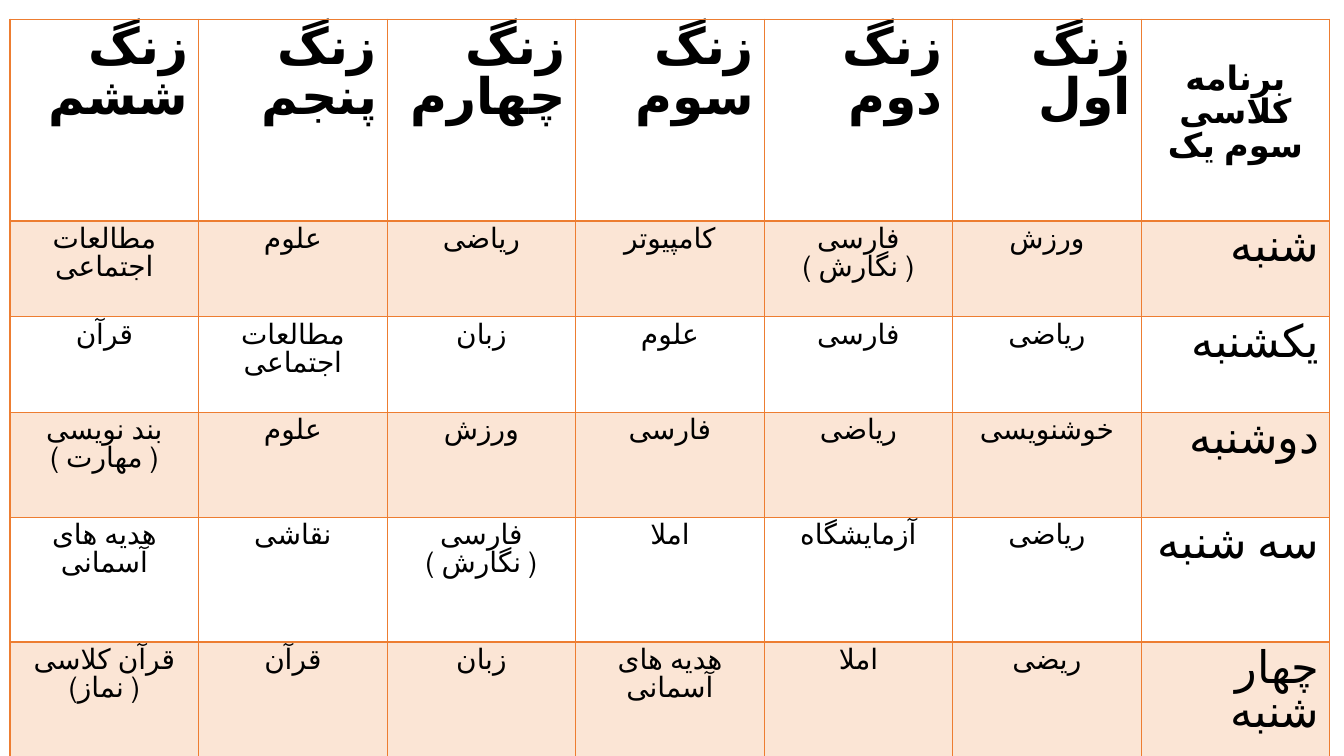
from lxml import etree
from pptx import Presentation
from pptx.dml.color import RGBColor
from pptx.enum.lang import MSO_LANGUAGE_ID
from pptx.enum.text import PP_ALIGN
from pptx.oxml.ns import qn
from pptx.util import Inches, Pt

CENTER, RIGHT = PP_ALIGN.CENTER, PP_ALIGN.RIGHT
FARSI = MSO_LANGUAGE_ID.FARSI
COLORS = {"accent": "ED7D31", "text": "000000"}
BAND_ALPHA = 20
COLUMN_WIDTH = 1.87
ROW_HEIGHTS = [2.0, 0.95, 0.95, 1.04, 1.24, 1.24]
TITLE = "برنامه کلاسی سوم یک"
BELLS = ["زنگ ششم", "زنگ پنجم", "زنگ چهارم", "زنگ سوم", "زنگ دوم", "زنگ اول"]
DAYS = [
    ("شنبه", ["مطالعات\nاجتماعی", "علوم", "ریاضی", "کامپیوتر",
              "فارسی\n( نگارش )", "ورزش"]),
    ("یکشنبه", ["قرآن", "مطالعات\nاجتماعی", "زبان", "علوم", "فارسی", "ریاضی"]),
    ("دوشنبه", ["بند نویسی\n( مهارت )", "علوم", "ورزش", "فارسی", "ریاضی",
                "خوشنویسی"]),
    ("سه شنبه", ["هدیه های آسمانی", "نقاشی", "فارسی\n( نگارش )", "املا",
                 "آزمایشگاه", "ریاضی"]),
    ("چهار شنبه", ["قرآن کلاسی\n( نماز)", "قرآن", "زبان", "هدیه های آسمانی",
                   "املا", "ریضی"]),
]


def write_cell(cell, text, size, align, bold=False, font="Calibri"):
    """Write right-to-left text, one paragraph for each line."""
    cell.text_frame.text = text
    for paragraph in cell.text_frame.paragraphs:
        paragraph.alignment = align
        paragraph._p.get_or_add_pPr().set("rtl", "1")
        for run in paragraph.runs:
            run.font.size = Pt(size)
            run.font.bold = bold
            run.font.name = font
            run.font.language_id = FARSI
            run.font.color.rgb = RGBColor.from_string(COLORS["text"])


def add_solid_fill(parent, color):
    fill = etree.SubElement(parent, qn("a:solidFill"))
    return etree.SubElement(fill, qn("a:srgbClr"), val=color)


def style_cell(cell, is_header, is_banded):
    """Draw the four borders, then the fill, in schema order."""
    properties = cell._tc.get_or_add_tcPr()
    for side in ("lnL", "lnR", "lnT", "lnB"):
        width = 2 if is_header and side == "lnB" else 1
        border = etree.SubElement(properties, qn(f"a:{side}"), w=str(Pt(width)))
        add_solid_fill(border, COLORS["accent"])
    if is_banded:
        band = add_solid_fill(properties, COLORS["accent"])
        etree.SubElement(band, qn("a:alpha"), val=str(BAND_ALPHA * 1000))
    else:
        cell.fill.background()


def add_timetable(slide):
    columns = len(BELLS) + 1
    timetable = slide.shapes.add_table(
        len(ROW_HEIGHTS), columns, Inches(0.1), Inches(0.19),
        Inches(COLUMN_WIDTH * columns), Inches(sum(ROW_HEIGHTS))).table
    for column in timetable.columns:
        column.width = Inches(COLUMN_WIDTH)
    for row_index, height in enumerate(ROW_HEIGHTS):
        timetable.rows[row_index].height = Inches(height)
        for cell in timetable.rows[row_index].cells:
            style_cell(cell, row_index == 0, row_index % 2 == 1)
    return timetable


def fill_timetable(timetable):
    last = len(BELLS)
    for column, bell in enumerate(BELLS):
        write_cell(timetable.cell(0, column), bell, 36, RIGHT, bold=True)
    title_cell = timetable.cell(0, last)
    write_cell(title_cell, TITLE, 24, CENTER, bold=True, font="Lato")
    title_cell.margin_top = Inches(0.44)
    for row, (day, lessons) in enumerate(DAYS, start=1):
        for column, lesson in enumerate(lessons):
            write_cell(timetable.cell(row, column), lesson, 20, CENTER)
        write_cell(timetable.cell(row, last), day, 32, RIGHT)


def main():
    presentation = Presentation()
    presentation.slide_width = Inches(13.33)
    presentation.slide_height = Inches(7.5)
    slide = presentation.slides.add_slide(presentation.slide_layouts[6])
    fill_timetable(add_timetable(slide))
    presentation.save("out.pptx")


if __name__ == "__main__":
    main()
